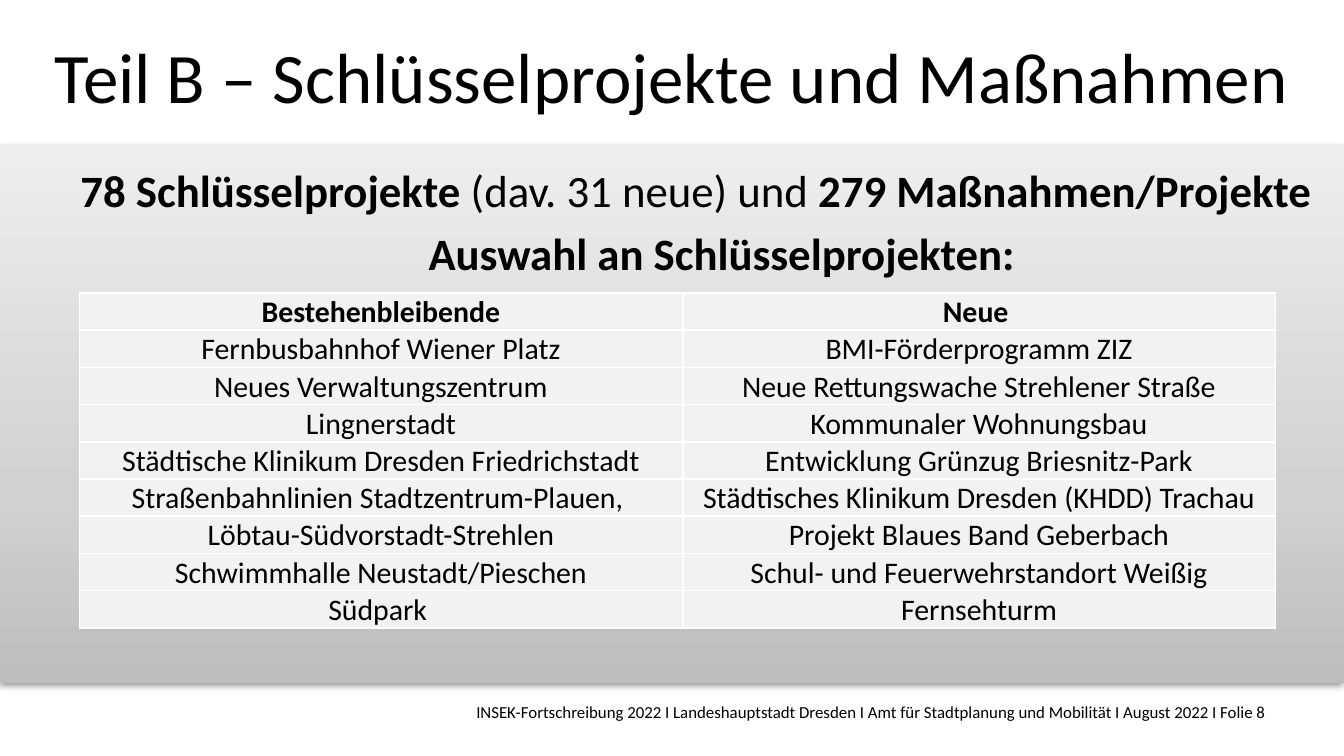
from pptx import Presentation
from pptx.dml.color import RGBColor
from pptx.enum.shapes import MSO_SHAPE
from pptx.enum.text import MSO_ANCHOR, PP_ALIGN
from pptx.oxml import parse_xml
from pptx.oxml.ns import nsdecls, qn
from pptx.util import Inches, Pt

RECTANGLE = MSO_SHAPE.RECTANGLE
TOP, MIDDLE = MSO_ANCHOR.TOP, MSO_ANCHOR.MIDDLE
LEFT, CENTER, RIGHT = PP_ALIGN.LEFT, PP_ALIGN.CENTER, PP_ALIGN.RIGHT

PROJECTS = [
    ("Bestehenbleibende", "Neue "),
    ("Fernbusbahnhof Wiener Platz", "BMI-Förderprogramm ZIZ"),
    ("Neues Verwaltungszentrum", "Neue Rettungswache Strehlener Straße"),
    ("Lingnerstadt", "Kommunaler Wohnungsbau"),
    ("Städtische Klinikum Dresden Friedrichstadt", "Entwicklung Grünzug Briesnitz-Park"),
    ("Straßenbahnlinien Stadtzentrum-Plauen, ", " Städtisches Klinikum Dresden (KHDD) Trachau "),
    ("Löbtau-Südvorstadt-Strehlen", "Projekt Blaues Band Geberbach"),
    ("Schwimmhalle Neustadt/Pieschen", "Schul- und Feuerwehrstandort Weißig"),
    ("Südpark ", "Fernsehturm"),
]
ROW_HEIGHTS = [0.21] * 5 + [0.27] + [0.21] * 3


def color(value):
    return RGBColor.from_string(value)


class SlideBuilder:
    FONT = "Calibri"
    TEXT = "000000"
    CELL = "F2F2F2"
    BORDER = "FFFFFF"

    def __init__(self, slide):
        self.slide = slide

    def style(self, paragraph, size, align=LEFT, bold=None):
        paragraph.alignment = align
        font = paragraph.font
        font.name, font.size, font.bold = self.FONT, Pt(size), bold
        font.color.rgb = color(self.TEXT)

    def text(self, box, paragraphs, size, align=LEFT, anchor=TOP,
             margins=(0.1, 0.05, 0.1, 0.05), space_before=0):
        """Add paragraphs given as (left indent, [(text, bold), ...])."""
        frame = self.slide.shapes.add_textbox(*map(Inches, box)).text_frame
        frame.word_wrap = True
        frame.vertical_anchor = anchor
        (frame.margin_left, frame.margin_top,
         frame.margin_right, frame.margin_bottom) = map(Inches, margins)
        for index, (indent, runs) in enumerate(paragraphs):
            paragraph = frame.add_paragraph() if index else frame.paragraphs[0]
            self.style(paragraph, size, align)
            if index:
                paragraph.space_before = Pt(space_before)
            if indent:
                paragraph._p.get_or_add_pPr().set("marL", str(Inches(indent)))
            for content, bold in runs:
                run = paragraph.add_run()
                run.text = content
                run.font.bold = bold

    def gradient_panel(self, box, stops):
        """Add a borderless panel with a bottom-to-top gradient and a soft shadow."""
        shape = self.slide.shapes.add_shape(RECTANGLE, *map(Inches, box))
        shape.line.fill.background()
        shape.fill.gradient()
        shape.fill.gradient_angle = 90
        properties = shape._element.spPr
        stop_list = properties.find(qn("a:gradFill")).find(qn("a:gsLst"))
        for stop in list(stop_list):
            stop_list.remove(stop)
        for position, value in stops:
            stop_list.append(parse_xml(
                f'<a:gs {nsdecls("a")} pos="{position * 1000}">'
                f'<a:srgbClr val="{value}"/></a:gs>'))
        properties.append(parse_xml(
            f'<a:effectLst {nsdecls("a")}>'
            f'<a:outerShdw blurRad="{Pt(3.1)}" dist="{Pt(1.6)}" dir="5400000" rotWithShape="0">'
            '<a:srgbClr val="000000"><a:alpha val="38000"/></a:srgbClr>'
            '</a:outerShdw></a:effectLst>'))

    def cell(self, cell, content, size, bold):
        cell.margin_left = cell.margin_right = cell.margin_top = Inches(0.01)
        cell.margin_bottom = 0
        cell.text = content
        self.style(cell.text_frame.paragraphs[0], size, CENTER, bold)
        properties = cell._tc.get_or_add_tcPr()
        for side in ("lnL", "lnR", "lnT", "lnB"):
            properties.append(parse_xml(
                f'<a:{side} {nsdecls("a")} w="{Pt(1)}"><a:solidFill>'
                f'<a:srgbClr val="{self.BORDER}"/></a:solidFill></a:{side}>'))
        cell.fill.solid()
        cell.fill.fore_color.rgb = color(self.CELL)

    def table(self, box, widths, heights, rows, size):
        shape = self.slide.shapes.add_table(
            len(rows), len(widths), *map(Inches, box))
        table = shape.table
        for column, width in zip(table.columns, widths):
            column.width = Inches(width)
        for row, height in zip(table.rows, heights):
            row.height = Inches(height)
        shape.height = Inches(box[3])
        for row_index, row in enumerate(rows):
            for column_index, content in enumerate(row):
                self.cell(table.cell(row_index, column_index), content, size,
                          bold=row_index == 0)


def main():
    presentation = Presentation()
    presentation.slide_width = Inches(10)
    presentation.slide_height = Inches(10 * 9 / 16)
    builder = SlideBuilder(presentation.slides.add_slide(presentation.slide_layouts[6]))

    builder.text(
        (0.01, 5.17, 10.03, 0.46),
        [(0, [("INSEK-Fortschreibung 2022 I Landeshauptstadt Dresden I Amt für "
               "Stadtplanung und Mobilität I August 2022 I Folie 8", False)])],
        9, RIGHT, margins=(0.63, 0.05, 0.63, 0.24))
    builder.gradient_panel((0, 1.08, 10, 4),
                           [(0, "BDBDBD"), (35, "D1D1D1"), (100, "EEEEEE")])
    builder.text((0.25, 0.09, 9.5, 0.94),
                 [(0, [("Teil B – Schlüsselprojekte und Maßnahmen", False)])],
                 38, CENTER, MIDDLE)
    builder.text(
        (0.5, 1.16, 9.38, 1.18),
        [(0, [("78 Schlüsselprojekte ", True), ("(dav. 31 neue) und ", False),
              ("279 Maßnahmen/Projekte", True)]),
         (2.59, [("Auswahl an Schlüsselprojekten:", True)])],
        24, space_before=4.8)
    builder.table((0.59, 2.18, 8.9, 2.49), (4.49, 4.41), ROW_HEIGHTS, PROJECTS, 16)

    presentation.save("out.pptx")


if __name__ == "__main__":
    main()
